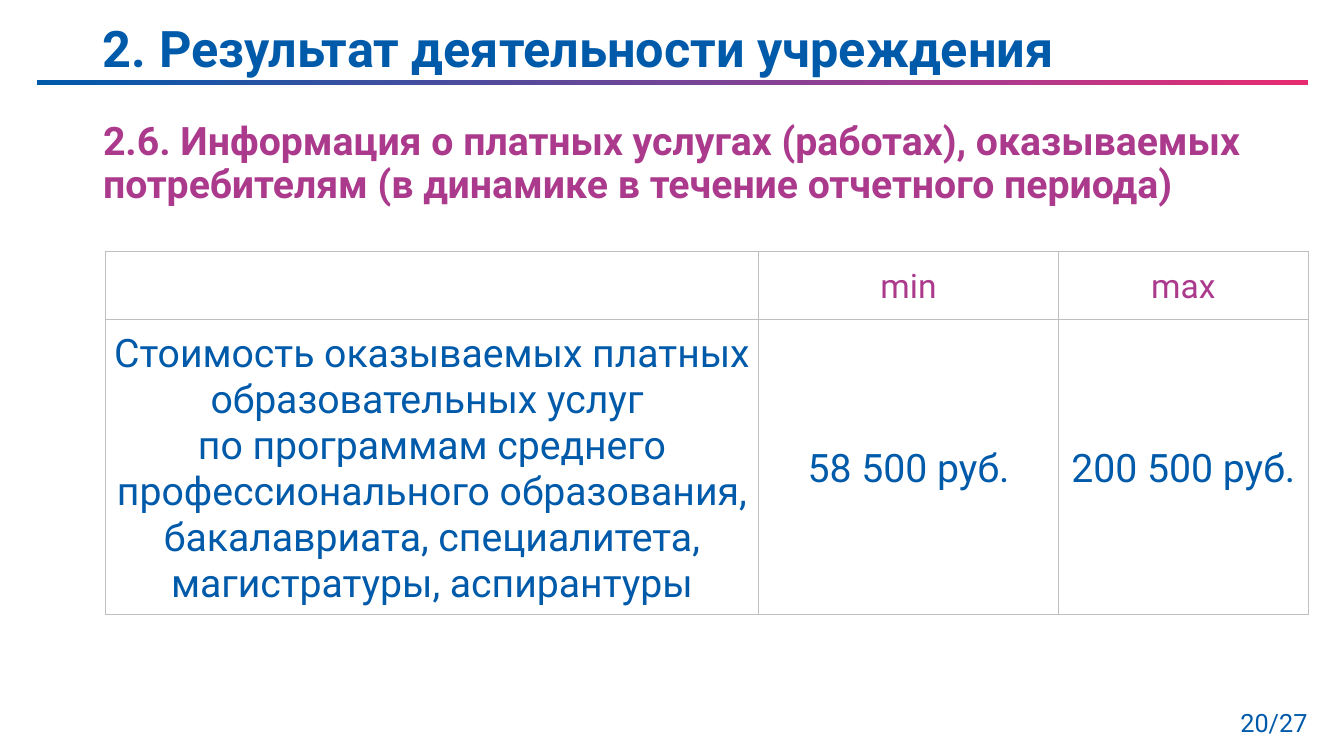
import copy
from dataclasses import dataclass

import pptx
import pptx.dml.color
import pptx.enum.shapes
import pptx.enum.text
import pptx.oxml
import pptx.oxml.ns
import pptx.util

Pt = pptx.util.Pt
RGBColor = pptx.dml.color.RGBColor
Align = pptx.enum.text.PP_ALIGN
Anchor = pptx.enum.text.MSO_ANCHOR
qn = pptx.oxml.ns.qn

BLUE = RGBColor(0x00, 0x5A, 0xAA)
PURPLE = RGBColor(0xAB, 0x3A, 0x8D)
PINK = RGBColor(0xE7, 0x2B, 0x70)
BORDER_GRAY = RGBColor(0xBF, 0xBF, 0xBF)
FONT_NAME = "Roboto"


@dataclass
class Label:
    text: str
    size: float
    color: RGBColor
    bold: bool = False
    align: Align = Align.LEFT
    line_spacing: float = 1.0


@dataclass
class TextBlock:
    label: Label
    left: float
    top: float
    width: float
    height: float
    anchor: Anchor = Anchor.TOP


def cell_label(text: str, size: float, color: RGBColor) -> Label:
    return Label(text, size, color, align=Align.CENTER)


TEXT_BLOCKS = [
    TextBlock(Label("20/27", 18, BLUE, align=Align.RIGHT), 876, 502, 65, 29),
    TextBlock(
        Label(
            "2.6. Информация о платных услугах (работах), оказываемых "
            "потребителям (в динамике в течение отчетного периода)",
            28, PURPLE, bold=True, line_spacing=0.9,
        ),
        66.5, 83.5, 867.5, 400,
    ),
    TextBlock(
        Label("2. Результат деятельности учреждения", 36, BLUE, bold=True, line_spacing=0.9),
        66.5, 7, 828, 59, Anchor.MIDDLE,
    ),
]

COLUMN_WIDTHS = [467, 214, 178.5]
ROW_HEIGHTS = [49, 205]
PRICE_ROWS = [
    [cell_label("", 24, PURPLE), cell_label("min", 24, PURPLE), cell_label("max", 24, PURPLE)],
    [
        cell_label(
            "Стоимость оказываемых платных образовательных услуг \v"
            "по программам среднего профессионального образования, "
            "бакалавриата, специалитета, магистратуры, аспирантуры",
            28, BLUE,
        ),
        cell_label("58 500 руб.", 28, BLUE),
        cell_label("200 500 руб.", 28, BLUE),
    ],
]
CELL_FORMAT = {
    "vertical_anchor": Anchor.MIDDLE,
    "margin_left": Pt(3),
    "margin_top": Pt(6),
    "margin_right": Pt(3),
    "margin_bottom": Pt(3),
}


def set_attributes(target: object, values: dict) -> None:
    for name, value in values.items():
        setattr(target, name, value)


def write_label(text_frame: pptx.text.text.TextFrame, label: Label) -> None:
    paragraph = text_frame.paragraphs[0]
    paragraph.text = label.text
    set_attributes(paragraph, {"alignment": label.align, "line_spacing": label.line_spacing})
    for font in [paragraph.font, *(run.font for run in paragraph.runs)]:
        set_attributes(font, {"name": FONT_NAME, "size": Pt(label.size), "bold": label.bold})
        font.color.rgb = label.color


def add_gradient_rule(slide: pptx.slide.Slide) -> None:
    shape = slide.shapes.add_shape(
        pptx.enum.shapes.MSO_SHAPE.RECTANGLE, Pt(26.5), Pt(57.5), Pt(907.5), Pt(3)
    )
    shape.shadow.inherit = False
    shape.line.fill.background()
    shape.fill.gradient()
    shape.fill.gradient_angle = 0
    stop_list = shape._element.spPr.find(qn("a:gradFill")).find(qn("a:gsLst"))
    stop_list.append(copy.deepcopy(stop_list[-1]))
    stops = zip(shape.fill.gradient_stops, [0, 0.75, 1], [BLUE, PURPLE, PINK])
    for stop, position, color in stops:
        stop.position = position
        stop.color.rgb = color


def add_text_block(slide: pptx.slide.Slide, block: TextBlock) -> None:
    shape = slide.shapes.add_textbox(
        Pt(block.left), Pt(block.top), Pt(block.width), Pt(block.height)
    )
    set_attributes(shape.text_frame, {"word_wrap": True, "vertical_anchor": block.anchor})
    write_label(shape.text_frame, block.label)


def add_borders(cell: pptx.table._Cell) -> None:
    properties = cell._tc.get_or_add_tcPr()
    for index, side in enumerate(["lnL", "lnR", "lnT", "lnB"]):
        border = pptx.oxml.parse_xml(
            f'<a:{side} xmlns:a="http://schemas.openxmlformats.org/drawingml/2006/main" '
            f'w="{Pt(0.5)}"><a:solidFill><a:srgbClr val="{BORDER_GRAY}"/></a:solidFill></a:{side}>'
        )
        properties.insert(index, border)


def add_price_table(slide: pptx.slide.Slide) -> None:
    table = slide.shapes.add_table(
        len(ROW_HEIGHTS), len(COLUMN_WIDTHS), Pt(75), Pt(179.25),
        Pt(sum(COLUMN_WIDTHS)), Pt(sum(ROW_HEIGHTS)),
    ).table
    set_attributes(table, {"first_row": False, "horz_banding": False})
    for column, width in zip(table.columns, COLUMN_WIDTHS):
        column.width = Pt(width)
    for row, height, labels in zip(table.rows, ROW_HEIGHTS, PRICE_ROWS):
        row.height = Pt(height)
        for cell, label in zip(row.cells, labels):
            set_attributes(cell, CELL_FORMAT)
            cell.fill.background()
            add_borders(cell)
            write_label(cell.text_frame, label)


def main() -> None:
    presentation = pptx.Presentation()
    set_attributes(presentation, {"slide_width": Pt(960), "slide_height": Pt(540)})
    slide = presentation.slides.add_slide(presentation.slide_layouts[6])
    add_gradient_rule(slide)
    for block in TEXT_BLOCKS:
        add_text_block(slide, block)
    add_price_table(slide)
    presentation.save("out.pptx")


if __name__ == "__main__":
    main()
